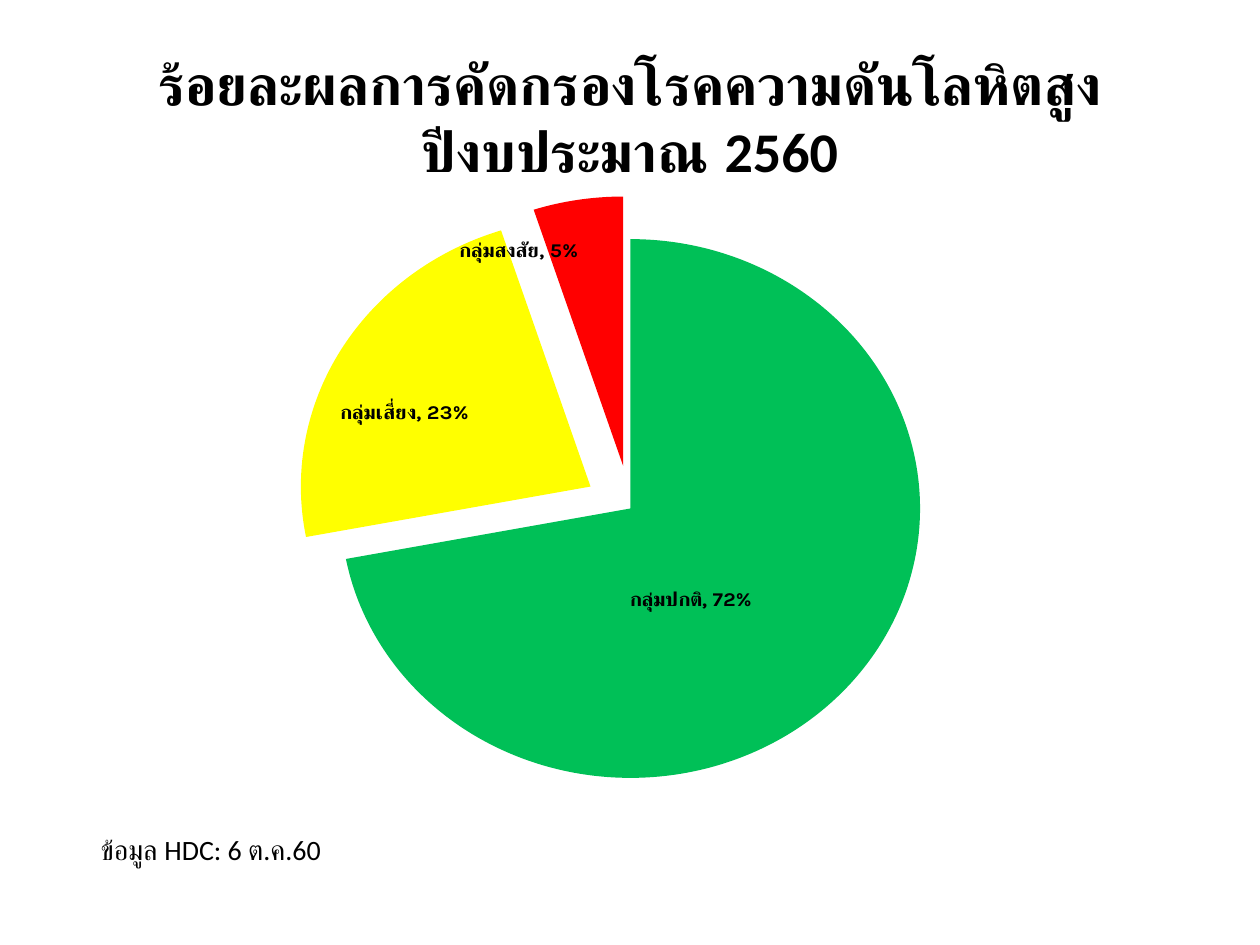
import pptx
import pptx.chart.data
import pptx.dml.color
import pptx.enum.chart
import pptx.enum.text
import pptx.oxml
import pptx.oxml.ns
import pptx.util
from dataclasses import dataclass
from pptx.util import Inches


@dataclass(frozen=True)
class Slice:
    name: str
    share: float
    colour: str
    explosion: int
    shift_x: float
    shift_y: float


SLICES = [
    Slice("กลุ่มปกติ", 0.72, "00C057", 0, -0.05, 0.01),
    Slice("กลุ่มเสี่ยง", 0.23, "FFFF00", 16, -0.06, -0.01),
    Slice("กลุ่มสงสัย", 0.05, "FF0000", 16, -0.08, -0.18),
]


def paint(target, colour: str) -> None:
    target.rgb = pptx.dml.color.RGBColor.from_string(colour)


def style_font(font, name: str, size: float, bold: bool = False) -> None:
    font.name = name
    font.size = pptx.util.Pt(size)
    font.bold = bold
    paint(font.color, "000000")


def add_text(page, words: str, place: tuple, size: float, bold: bool = False,
             align=pptx.enum.text.PP_ALIGN.LEFT,
             anchor=pptx.enum.text.MSO_ANCHOR.TOP) -> None:
    box = page.shapes.add_textbox(*(Inches(length) for length in place))
    frame = box.text_frame
    frame.word_wrap = True
    frame.vertical_anchor = anchor
    para = frame.paragraphs[0]
    para.alignment = align
    span = para.add_run()
    span.text = words
    style_font(span.font, "Calibri", size, bold)


def make_layout(**settings):
    children = "".join(f'<c:{tag} val="{value}"/>' for tag, value in settings.items())
    return pptx.oxml.parse_xml(
        f'<c:layout {pptx.oxml.ns.nsdecls("c")}>'
        f"<c:manualLayout>{children}</c:manualLayout></c:layout>")


def add_pie(page, slices: list[Slice], place: tuple) -> None:
    data = pptx.chart.data.CategoryChartData(number_format="0%")
    data.categories = [part.name for part in slices]
    data.add_series("Series 1", [part.share for part in slices])
    chart = page.shapes.add_chart(
        pptx.enum.chart.XL_CHART_TYPE.PIE,
        *(Inches(length) for length in place), data).chart
    chart.has_legend = False
    chart.has_title = False
    style_font(chart.font, "Calibri", 10)

    area = chart.plots[0]
    area.vary_by_categories = True
    series = area.series[0]
    labels = series.data_labels
    labels.show_category_name = True
    labels.show_value = True
    labels.number_format = "0%"
    labels.number_format_is_linked = False
    style_font(labels.font, "Karla", 12, True)

    for index, part in enumerate(slices):
        point = series.points[index]
        point.format.fill.solid()
        paint(point.format.fill.fore_color, part.colour)
        point.format.line.fill.background()
        explosion = pptx.oxml.parse_xml(
            f'<c:explosion {pptx.oxml.ns.nsdecls("c")} val="{part.explosion}"/>')
        shape_format = series._element.xpath(f"c:dPt[c:idx/@val='{index}']/c:spPr")[0]
        shape_format.addprevious(explosion)

        label = point.data_label
        para = label.text_frame.paragraphs[0]
        span = para.add_run()
        span.text = f"{part.name}, {part.share:.0%}"
        style_font(span.font, "Karla", 12, True)
        label.position = pptx.enum.chart.XL_LABEL_POSITION.CENTER
        label_index = series._element.xpath(f"c:dLbls/c:dLbl/c:idx[@val='{index}']")[0]
        label_index.addnext(make_layout(x=part.shift_x, y=part.shift_y))

    plot_area = chart._chartSpace.chart.plotArea
    for old in plot_area.xpath("c:layout"):
        plot_area.remove(old)
    plot_area.insert(0, make_layout(
        layoutTarget="inner", xMode="edge", yMode="edge", x=0, y=0, w=0.98, h=0.95))


def main() -> None:
    deck = pptx.Presentation()
    deck.slide_width = Inches(10)
    deck.slide_height = Inches(7.5)
    page = deck.slides.add_slide(deck.slide_layouts[6])
    add_text(page, "ร้อยละผลการคัดกรองโรคความดันโลหิตสูง ปีงบประมาณ 2560",
             (0.5, 0.3, 9, 1.25), 32, True,
             pptx.enum.text.PP_ALIGN.CENTER, pptx.enum.text.MSO_ANCHOR.MIDDLE)
    add_text(page, "ข้อมูล HDC: 6 ต.ค.60", (0.7, 6.56, 3.75, 0.37), 16)
    add_pie(page, SLICES, (1.02, 1.56, 8.13, 4.84))
    deck.save("out.pptx")


if __name__ == "__main__":
    main()
